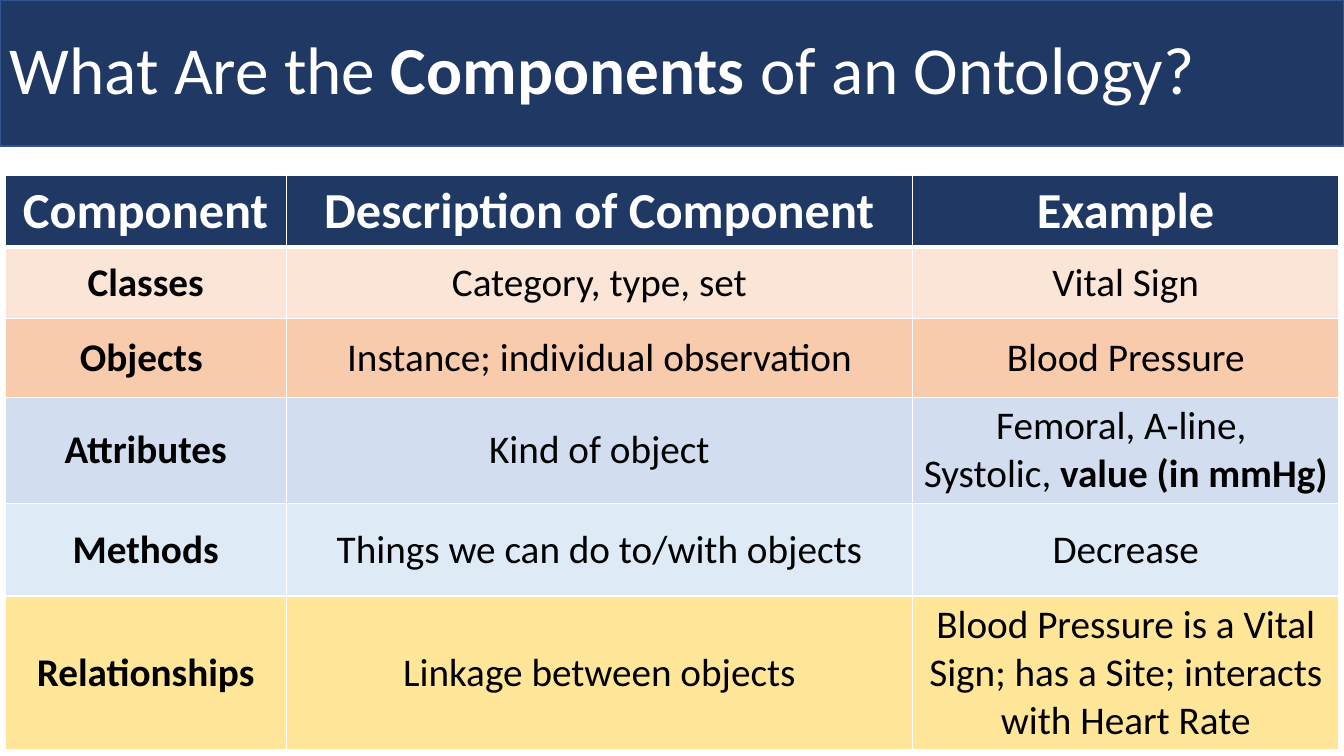
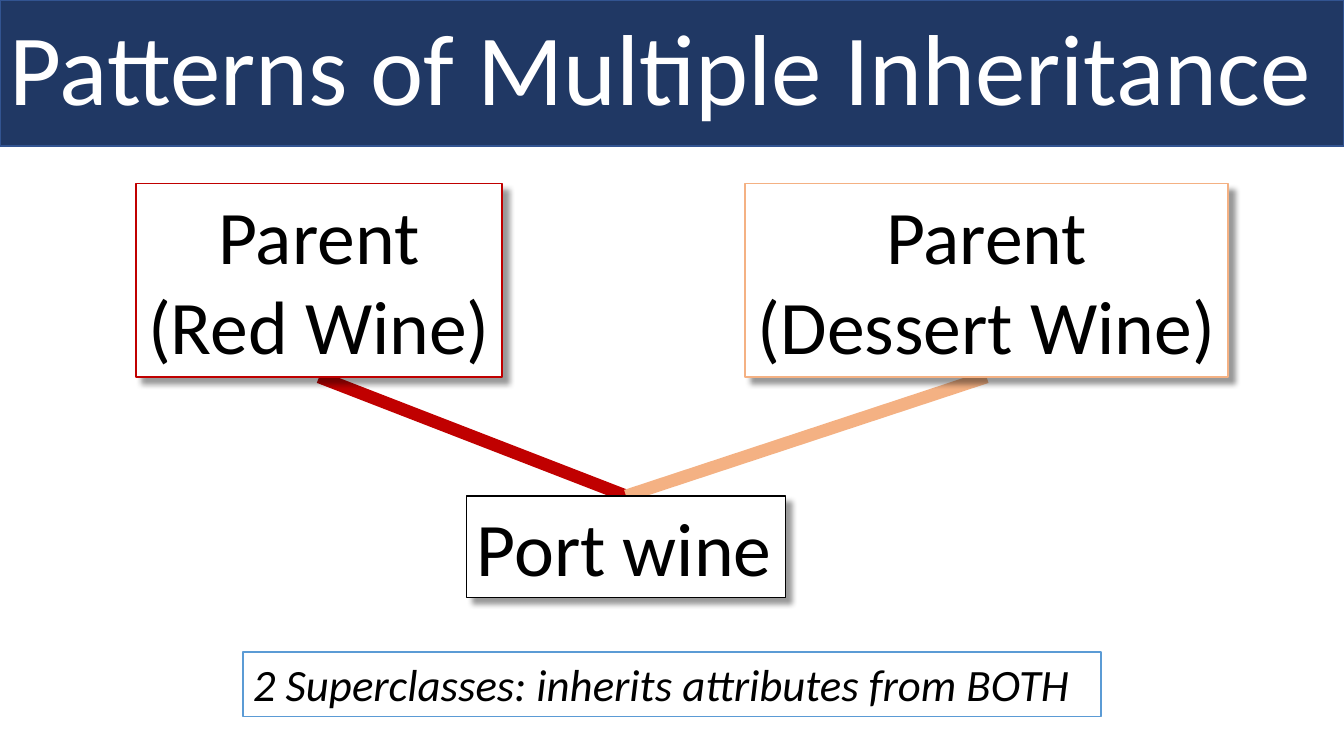
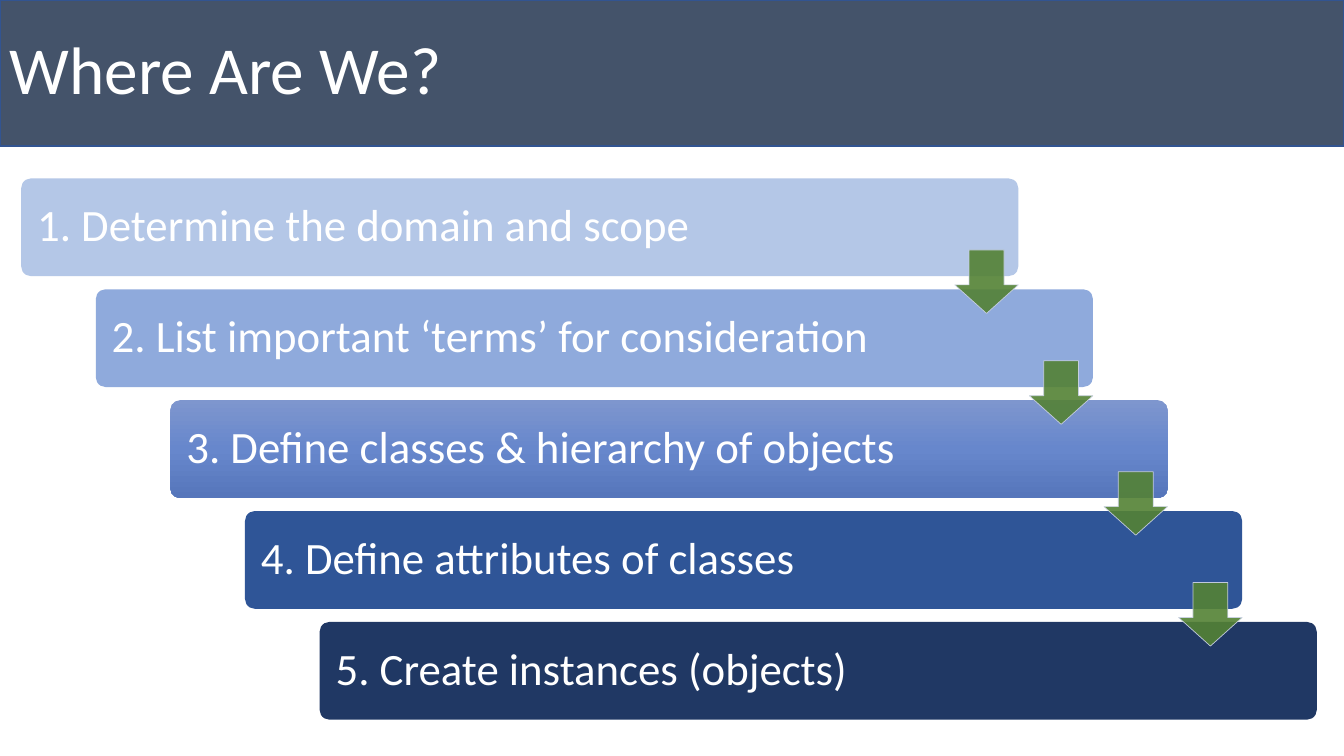
import copy

import lxml.etree
import pptx
import pptx.dml.color
import pptx.enum.shapes
import pptx.enum.text
import pptx.oxml.ns
import pptx.util

Inches = pptx.util.Inches
Pt = pptx.util.Pt
qn = pptx.oxml.ns.qn
SHAPES = pptx.enum.shapes.MSO_SHAPE
MIDDLE = pptx.enum.text.MSO_ANCHOR.MIDDLE
LEFT = pptx.enum.text.PP_ALIGN.LEFT
CENTER = pptx.enum.text.PP_ALIGN.CENTER

FONT = "Calibri"
NAVY, SLATE, BAND_LINE = "203864", "44536A", "325491"
WHITE, BLACK, RED, PEACH = "FFFFFF", "000000", "C00000", "F4B183"


def rgb(value):
    return pptx.dml.color.RGBColor.from_string(value)


def write(text_frame, text, size, color=BLACK, align=LEFT, bold=False, italic=False, spacing=1.0):
    """Fill a text frame; line breaks part paragraphs, asterisks enclose bold words."""
    for index, line in enumerate(text.split("\n")):
        paragraph = text_frame.add_paragraph() if index else text_frame.paragraphs[0]
        paragraph.alignment = align
        paragraph.line_spacing = spacing
        paragraph.font.name = FONT
        paragraph.font.size = Pt(size)
        paragraph.font.color.rgb = rgb(color)
        paragraph.font.bold = bold
        paragraph.font.italic = italic
        for position, part in enumerate(line.split("*")):
            if part:
                run = paragraph.add_run()
                run.text = part
                if position % 2:
                    run.font.bold = True


presentation = pptx.Presentation()
presentation.slide_width = Inches(13.33)
presentation.slide_height = Inches(7.5)

# Slides with their title bands
slides = []
for title, size, band_color in [
    ("What Are the *Components* of an Ontology?", 48, NAVY),
    ("Patterns of Multiple Inheritance", 72, NAVY),
    ("Where Are We?", 48, SLATE),
]:
    slide = presentation.slides.add_slide(presentation.slide_layouts[6])
    band = slide.shapes.add_shape(SHAPES.RECTANGLE, 0, 0, presentation.slide_width, Inches(1.45))
    band.shadow.inherit = False
    band.fill.solid()
    band.fill.fore_color.rgb = rgb(band_color)
    band.line.color.rgb = rgb(BAND_LINE)
    band.line.width = Pt(1)
    band.text_frame.word_wrap = True
    band.text_frame.vertical_anchor = MIDDLE
    write(band.text_frame, title, size, WHITE, spacing=0.9)
    slides.append(slide)
components_slide, inheritance_slide, steps_slide = slides

# Components: table, each row with its height, fill and texts
rows = [
    (0.62, NAVY, ["Component", "Description of Component", "Example"]),
    (0.71, "FBE5D6", ["Classes", "Category, type, set", "Vital Sign"]),
    (0.78, "F8CBAD", ["Objects ", "Instance; individual observation", "Blood Pressure"]),
    (0.92, "D2DEEF", ["Attributes", "Kind of object",
                      "Femoral, A-line, \nSystolic, *value (in mmHg)*"]),
    (0.92, "DEEBF7", ["Methods", "Things we can do to/with objects", "Decrease"]),
    (0.92, "FFE699", ["Relationships", "Linkage between objects",
                      "Blood Pressure is a Vital Sign; has a Site; interacts with Heart Rate"]),
]
table = components_slide.shapes.add_table(
    len(rows), 3, Inches(0.05), Inches(1.74), Inches(13.23), Inches(4.87)).table
for column, width in zip(table.columns, [2.79, 6.21, 4.23]):
    column.width = Inches(width)
for row_index, (height, fill, texts) in enumerate(rows):
    table.rows[row_index].height = Inches(height)
    is_header = row_index == 0
    for column_index, text in enumerate(texts):
        cell = table.cell(row_index, column_index)
        cell.vertical_anchor = MIDDLE
        # Borders, with a thick one under the header
        cell_properties = cell._tc.get_or_add_tcPr()
        for side in ("lnL", "lnR", "lnT", "lnB"):
            thick = (row_index, side) in [(0, "lnB"), (1, "lnT")]
            border = lxml.etree.SubElement(cell_properties, qn("a:" + side), w=str(Pt(3 if thick else 1)))
            border_fill = lxml.etree.SubElement(border, qn("a:solidFill"))
            lxml.etree.SubElement(border_fill, qn("a:srgbClr"), val=WHITE)
        cell.fill.solid()
        cell.fill.fore_color.rgb = rgb(fill)
        write(cell.text_frame, text, 36 if is_header else 28, WHITE if is_header else BLACK,
              CENTER, bold=is_header or column_index == 0)

# Inheritance: links lie behind the boxes and are joined to them below
links = []
for color in (RED, PEACH):
    link = inheritance_slide.shapes.add_connector(pptx.enum.shapes.MSO_CONNECTOR.STRAIGHT, 0, 0, 0, 0)
    link.line.color.rgb = rgb(color)
    link.line.width = Pt(9)
    lxml.etree.SubElement(link._element.spPr, qn("a:effectLst"))
    links.append(link)

# Inheritance: boxes
boxes = []
for text, left, top, width, height, color, size, align, is_note in [
    ("2 Superclasses: inherits attributes from BOTH", 2.41, 6.47, 8.51, 0.64, "5B9BD5", 32, LEFT, True),
    ("Parent\n(Red Wine)", 1.35, 1.82, 3.63, 1.92, RED, 54, CENTER, False),
    ("Parent\n(Dessert Wine)", 7.39, 1.82, 4.79, 1.92, PEACH, 54, CENTER, False),
    ("Port wine", 4.63, 4.92, 3.16, 1.01, BLACK, 54, LEFT, False),
]:
    box = inheritance_slide.shapes.add_shape(
        SHAPES.RECTANGLE, Inches(left), Inches(top), Inches(width), Inches(height))
    box.shadow.inherit = False
    box.fill.solid()
    box.fill.fore_color.rgb = rgb(WHITE)
    box.line.color.rgb = rgb(color)
    box.line.width = Pt(1)
    box.text_frame.word_wrap = False
    box.text_frame.auto_size = pptx.enum.text.MSO_AUTO_SIZE.SHAPE_TO_FIT_TEXT
    box.text_frame.vertical_anchor = pptx.enum.text.MSO_ANCHOR.TOP
    write(box.text_frame, text, size, align=align, italic=is_note)
    if not is_note:
        shadow = lxml.etree.SubElement(
            box._element.spPr.find(qn("a:effectLst")), qn("a:outerShdw"),
            blurRad=str(Pt(4)), dist=str(Pt(6)), dir=str(45 * 60000), algn="tl", rotWithShape="0")
        shadow_color = lxml.etree.SubElement(shadow, qn("a:srgbClr"), val=BLACK)
        lxml.etree.SubElement(shadow_color, qn("a:alpha"), val="40000")
    boxes.append(box)
note, red_wine, dessert_wine, port_wine = boxes
for link, parent in zip(links, (red_wine, dessert_wine)):
    link.begin_connect(parent, 2)
    link.end_connect(port_wine, 0)

# Steps: staircase of bars, the current one with a gradient
STEP_X, STEP_Y = 0.74, 1.1
steps = [
    ("1. Determine the domain and scope", ["B4C7E7"]),
    ("2. List important ‘terms’ for consideration", ["8FAADC"]),
    ("3. Define classes & hierarchy of objects", ["7E96CE", "6787CC", "5676BB"]),
    ("4. Define attributes of classes", ["2F5597"]),
    ("5. Create instances (objects)", [NAVY]),
]
for index, (text, colors) in enumerate(steps):
    bar = steps_slide.shapes.add_shape(
        SHAPES.ROUNDED_RECTANGLE, Inches(0.21 + index * STEP_X), Inches(1.77 + index * STEP_Y),
        Inches(9.89), Inches(0.97))
    bar.adjustments[0] = 0.1
    bar.shadow.inherit = False
    bar.line.fill.background()
    if len(colors) == 1:
        bar.fill.solid()
        bar.fill.fore_color.rgb = rgb(colors[0])
    else:
        bar.fill.gradient()
        bar.fill.gradient_angle = 270
        stop_list = next(bar._element.spPr.iter(qn("a:gsLst")))
        stop_list.insert(1, copy.deepcopy(stop_list[0]))
        for stop, color, position in zip(bar.fill.gradient_stops, colors, (0, 0.5, 1)):
            stop.color.rgb = rgb(color)
            stop.position = position
    frame = bar.text_frame
    frame.word_wrap = True
    frame.vertical_anchor = MIDDLE
    frame.margin_left = frame.margin_right = frame.margin_top = frame.margin_bottom = Inches(0.13)
    write(frame, text, 32, WHITE, spacing=0.9)

# Steps: translucent arrows from each bar to the next
for index in range(len(steps) - 1):
    arrow = steps_slide.shapes.add_shape(
        SHAPES.DOWN_ARROW, Inches(9.47 + index * STEP_X), Inches(2.48 + index * STEP_Y),
        Inches(0.63), Inches(0.63))
    arrow.adjustments[0] = 0.55
    arrow.adjustments[1] = 0.45
    arrow.shadow.inherit = False
    arrow.fill.solid()
    arrow.fill.fore_color.rgb = rgb("548235")
    arrow.line.color.rgb = rgb("CFD5EA")
    arrow.line.width = Pt(0.5)
    for arrow_color in arrow._element.spPr.iter(qn("a:srgbClr")):
        lxml.etree.SubElement(arrow_color, qn("a:alpha"), val="90000")

presentation.save("out.pptx")
